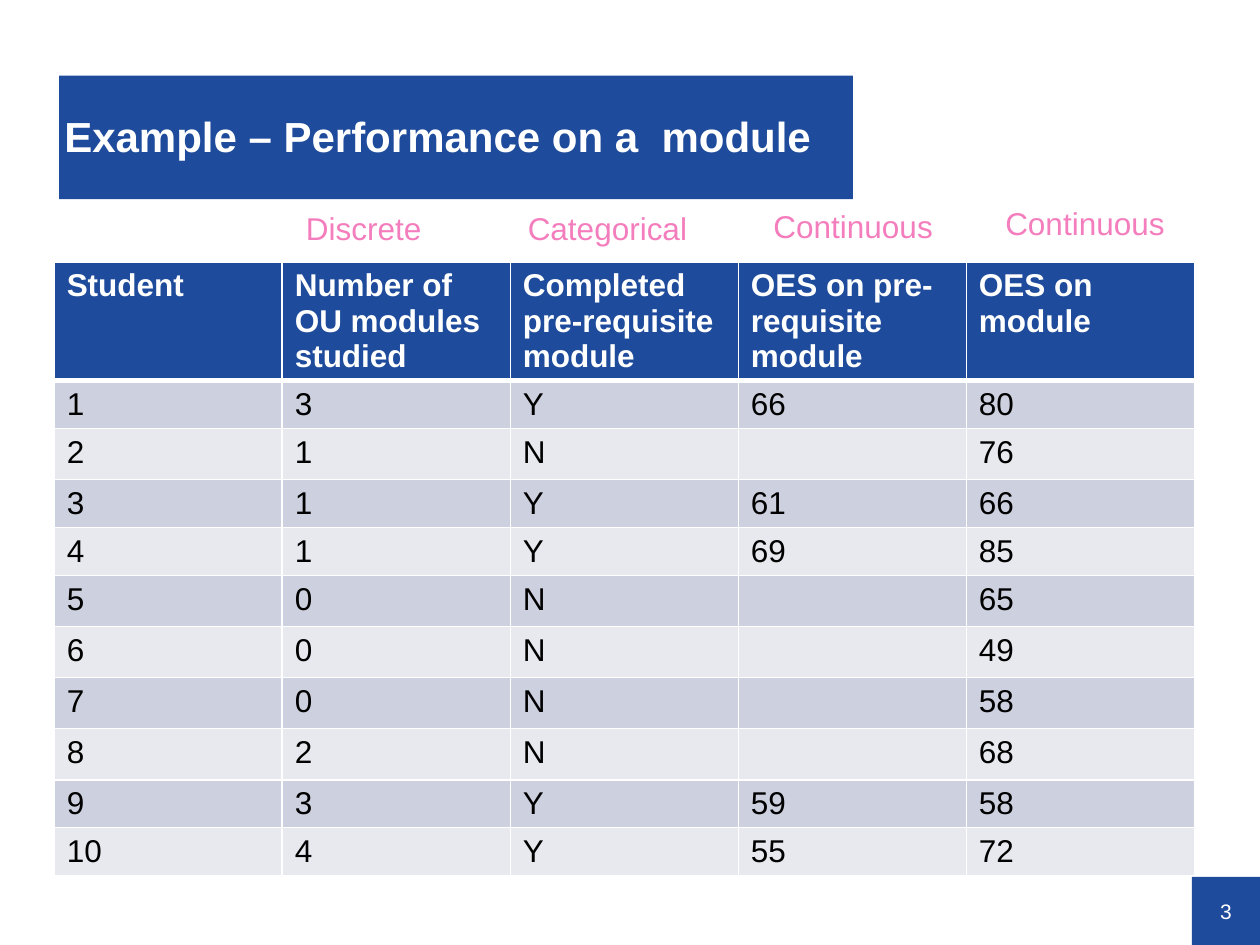
import dataclasses
import typing

import lxml.etree
import pptx
import pptx.dml.color
import pptx.enum.shapes
import pptx.enum.text
import pptx.oxml.ns
import pptx.util

Inches = pptx.util.Inches
Anchor = pptx.enum.text.MSO_ANCHOR
Align = pptx.enum.text.PP_ALIGN
AutoSize = pptx.enum.text.MSO_AUTO_SIZE


@dataclasses.dataclass(frozen=True)
class Theme:
    font: str = "Arial"
    blue: str = "1E4B9B"
    pink: str = "F47EBD"
    white: str = "FFFFFF"
    black: str = "000000"
    bands: tuple[str, str] = ("CDD0DE", "E8E9EF")
    title_size: int = 24
    body_size: int = 18
    number_size: int = 12
    thin_line: int = 1
    thick_line: int = 3


@dataclasses.dataclass(frozen=True)
class Label:
    text: str
    left: float
    top: float
    width: float


THEME = Theme()
LABELS = (
    Label("Categorical", 4.09, 1.61, 1.48),
    Label("Discrete", 2.33, 1.61, 1.13),
    Label("Continuous", 6.04, 1.59, 1.48),
    Label("Continuous", 7.88, 1.57, 1.48),
)
HEADER = (
    "Student",
    "Number of OU modules studied",
    "Completed pre-requisite module",
    "OES on pre-requisite module",
    "OES on module",
)
STUDENTS = (
    ("1", "3", "Y", "66", "80"),
    ("2", "1", "N", "", "76"),
    ("3", "1", "Y", "61", "66"),
    ("4", "1", "Y", "69", "85"),
    ("5", "0", "N", "", "65"),
    ("6", "0", "N", "", "49"),
    ("7", "0", "N", "", "58"),
    ("8", "2", "N", "", "68"),
    ("9", "3", "Y", "59", "58"),
    ("10", "4", "Y", "55", "72"),
)
COLUMN_WIDTH = 1.81
HEADER_HEIGHT = 0.93
ROW_HEIGHT = 0.38


def rgb(value: str) -> pptx.dml.color.RGBColor:
    return pptx.dml.color.RGBColor.from_string(value)


def apply(target: typing.Any, values: dict[str, typing.Any]) -> None:
    for name, value in values.items():
        setattr(target, name, value)


def write(para: typing.Any, text: str, size: int, color: str, bold: bool = False) -> None:
    span = para.add_run()
    span.text = text
    apply(span.font, {"name": THEME.font, "size": pptx.util.Pt(size), "bold": bold})
    span.font.color.rgb = rgb(color)


def paint(shape: typing.Any, color: str) -> None:
    shape.fill.solid()
    shape.fill.fore_color.rgb = rgb(color)


def add_title(page: typing.Any) -> None:
    title = page.shapes.title
    apply(title, {"left": Inches(0.47), "top": Inches(0.6),
                  "width": Inches(6.3), "height": Inches(0.98)})
    paint(title, THEME.blue)
    frame = title.text_frame
    apply(frame, {"auto_size": AutoSize.NONE, "word_wrap": True,
                  "vertical_anchor": Anchor.MIDDLE,
                  "margin_left": Inches(0.04), "margin_top": Inches(0.02),
                  "margin_right": 0, "margin_bottom": 0})
    para = frame.paragraphs[0]
    apply(para, {"alignment": Align.LEFT, "line_spacing": 0.9})
    write(para, "Example – Performance on a  module", THEME.title_size, THEME.white, True)


def add_page_number(page: typing.Any) -> None:
    box = page.shapes.add_shape(pptx.enum.shapes.MSO_SHAPE.RECTANGLE,
                                Inches(9.46), Inches(6.96), Inches(0.54), Inches(0.54))
    box.shadow.inherit = False
    paint(box, THEME.blue)
    box.line.fill.background()
    apply(box.text_frame, {"vertical_anchor": Anchor.MIDDLE, "margin_left": 0,
                           "margin_top": 0, "margin_right": 0, "margin_bottom": 0})
    para = box.text_frame.paragraphs[0]
    para.alignment = Align.CENTER
    write(para, "3", THEME.number_size, THEME.white)


def add_label(page: typing.Any, label: Label) -> None:
    box = page.shapes.add_textbox(Inches(label.left), Inches(label.top),
                                  Inches(label.width), Inches(0.4))
    apply(box.text_frame, {"word_wrap": False, "auto_size": AutoSize.SHAPE_TO_FIT_TEXT})
    write(box.text_frame.paragraphs[0], label.text, THEME.body_size, THEME.pink)


def add_borders(cell: typing.Any, top: int, bottom: int) -> None:
    properties = cell._tc.get_or_add_tcPr()
    widths = {"a:lnL": THEME.thin_line, "a:lnR": THEME.thin_line, "a:lnT": top, "a:lnB": bottom}
    for tag, width in widths.items():
        line = lxml.etree.SubElement(properties, pptx.oxml.ns.qn(tag), w=str(pptx.util.Pt(width)))
        fill = lxml.etree.SubElement(line, pptx.oxml.ns.qn("a:solidFill"))
        lxml.etree.SubElement(fill, pptx.oxml.ns.qn("a:srgbClr"), val=THEME.white)


def add_student_table(page: typing.Any) -> None:
    rows = (HEADER, *STUDENTS)
    height = HEADER_HEIGHT + ROW_HEIGHT * len(STUDENTS)
    table = page.shapes.add_table(len(rows), len(HEADER), Inches(0.43), Inches(2.08),
                                  Inches(COLUMN_WIDTH * len(HEADER)), Inches(height)).table
    for column in table.columns:
        column.width = Inches(COLUMN_WIDTH)
    for index, values in enumerate(rows):
        is_header = index == 0
        table.rows[index].height = Inches(HEADER_HEIGHT if is_header else ROW_HEIGHT)
        fill = THEME.blue if is_header else THEME.bands[(index - 1) % 2]
        color = THEME.white if is_header else THEME.black
        top = THEME.thick_line if index == 1 else THEME.thin_line
        bottom = THEME.thick_line if is_header else THEME.thin_line
        for position, text in enumerate(values):
            cell = table.cell(index, position)
            add_borders(cell, top, bottom)
            paint(cell, fill)
            if text:
                write(cell.text_frame.paragraphs[0], text, THEME.body_size, color, is_header)


def main() -> None:
    deck = pptx.Presentation()
    apply(deck, {"slide_width": Inches(10), "slide_height": Inches(7.5)})
    page = deck.slides.add_slide(deck.slide_layouts.get_by_name("Title Only"))
    add_page_number(page)
    add_title(page)
    add_student_table(page)
    for label in LABELS:
        add_label(page, label)
    deck.save("out.pptx")


if __name__ == "__main__":
    main()
